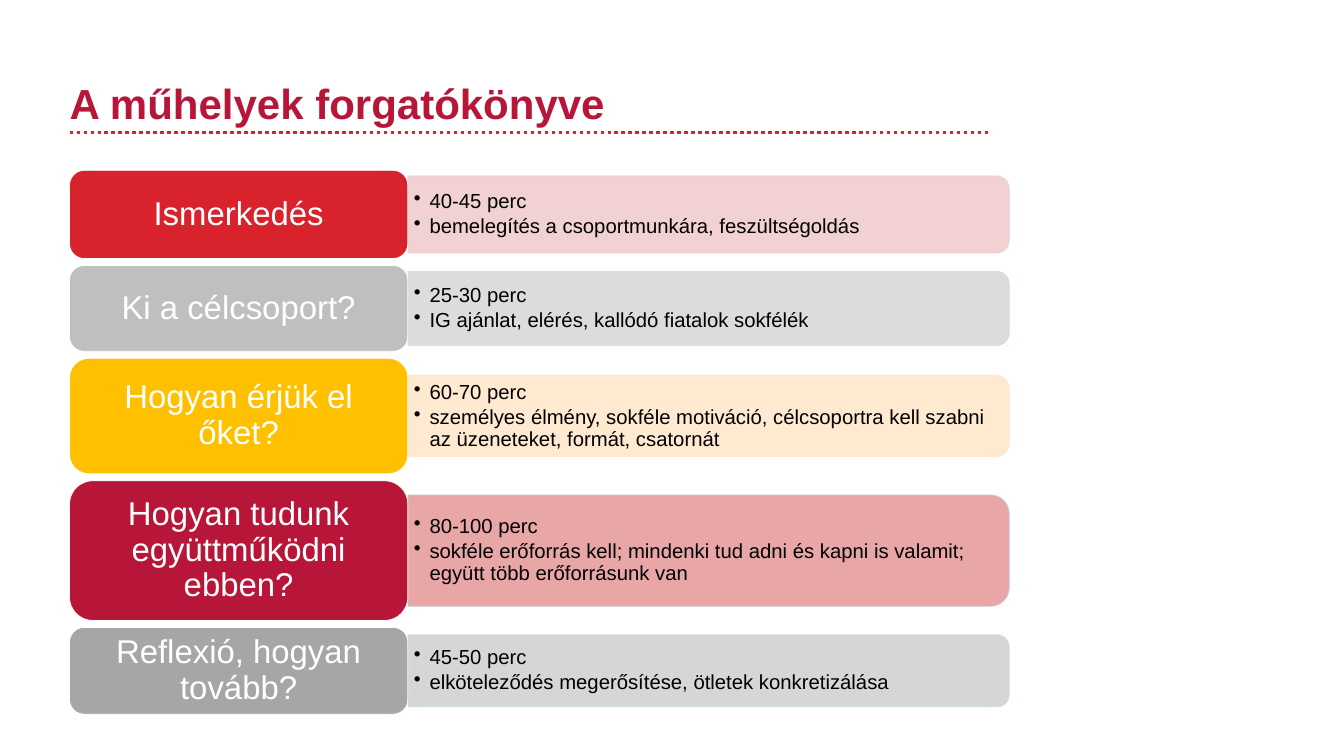
from dataclasses import dataclass

import lxml.etree
import pptx
import pptx.dml.color
import pptx.enum.dml
import pptx.enum.shapes
import pptx.enum.text
import pptx.oxml.ns
import pptx.util

RGBColor = pptx.dml.color.RGBColor
Inches = pptx.util.Inches
Pt = pptx.util.Pt
Shape = pptx.enum.shapes.MSO_SHAPE
Anchor = pptx.enum.text.MSO_ANCHOR
Align = pptx.enum.text.PP_ALIGN
qn = pptx.oxml.ns.qn

WHITE = RGBColor(0xFF, 0xFF, 0xFF)
BLACK = RGBColor(0, 0, 0)
RED = RGBColor(0xD8, 0x22, 0x2C)
CRIMSON = RGBColor(0xB8, 0x16, 0x39)
BLOOD = RGBColor(0xC0, 0, 0)
ROSE = RGBColor(0xF0, 0xCD, 0xCD)
AMBER = RGBColor(0xFF, 0xC0, 0)
CREAM = RGBColor(0xFF, 0xE8, 0xCC)
SILVER = RGBColor(0xBF, 0xBF, 0xBF)
PALE = RGBColor(0xD9, 0xD9, 0xD9)
GREY = RGBColor(0xA6, 0xA6, 0xA6)
MINT = RGBColor(0xCE, 0xE3, 0xD7)
MIST = RGBColor(0xCC, 0xCE, 0xD6)

FONT = "Arial"
LEFT, TOP, GAP = 1.38, 3.38, 0.14
LABEL_W, BAR_W = 6.71, 11.93
BAR_X = LEFT + LABEL_W


@dataclass(frozen=True)
class Step:
    label: str
    time: str
    detail: str
    height: float
    bar: float
    color: RGBColor
    tint: RGBColor
    alpha: int
    edge: RGBColor


STEPS = (
    Step("Ismerkedés", "40-45 perc", "bemelegítés a csoportmunkára, feszültségoldás",
         1.75, 1.53, RED, ROSE, 90, ROSE),
    Step("Ki a célcsoport?", "25-30 perc", "IG ajánlat, elérés, kallódó fiatalok sokfélék",
         1.7, 1.47, SILVER, PALE, 90, MINT),
    Step("Hogyan érjük el őket?", "60-70 perc",
         "személyes élmény, sokféle motiváció, célcsoportra kell szabni "
         "az üzeneteket, formát, csatornát",
         2.29, 1.62, AMBER, CREAM, 90, CREAM),
    Step("Hogyan tudunk együttműködni ebben?", "80-100 perc",
         "sokféle erőforrás kell; mindenki tud adni és kapni is valamit; "
         "együtt több erőforrásunk van",
         2.77, 2.21, CRIMSON, BLOOD, 35, MIST),
    Step("Reflexió, hogyan tovább?", "45-50 perc",
         "elköteleződés megerősítése, ötletek konkretizálása",
         1.72, 1.43, GREY, GREY, 46, MINT),
)


def set_frame(frame, anchor, side: float, edge: float) -> None:
    frame.word_wrap = True
    frame.vertical_anchor = anchor
    frame.margin_left = frame.margin_right = Inches(side)
    frame.margin_top = frame.margin_bottom = Inches(edge)


def set_font(para, size: float, color: RGBColor, bold: bool = False) -> None:
    font = para.font
    font.name, font.size, font.bold = FONT, Pt(size), bold
    font.color.rgb = color


def fade(fill, alpha: int) -> None:
    for node in fill.iter(qn("a:srgbClr")):
        lxml.etree.SubElement(node, qn("a:alpha"), val=str(alpha * 1000))


def add_block(slide, kind, box: tuple, color: RGBColor, edge: RGBColor):
    block = slide.shapes.add_shape(kind, *map(Inches, box))
    block.shadow.inherit = False
    block.fill.solid()
    block.fill.fore_color.rgb = color
    block.line.color.rgb = edge
    block.line.width = Pt(1)
    return block


def add_title(slide) -> None:
    box = slide.shapes.add_textbox(Inches(LEFT), Inches(1.48), Inches(18.24), Inches(2.02))
    set_frame(box.text_frame, Anchor.TOP, 0, 0.05)
    para = box.text_frame.paragraphs[0]
    para.text = "A műhelyek forgatókönyve"
    set_font(para, 60, CRIMSON, True)


def add_rule(slide) -> None:
    rule = slide.shapes.add_connector(pptx.enum.shapes.MSO_CONNECTOR.STRAIGHT,
                                      Inches(LEFT), Inches(2.63), Inches(19.62), Inches(2.63))
    rule.line.color.rgb = RED
    rule.line.width = Pt(5)
    rule.line.dash_style = pptx.enum.dml.MSO_LINE.ROUND_DOT
    lxml.etree.SubElement(rule._element.spPr, qn("a:effectLst"))


def add_bar(slide, step: Step, mid: float) -> None:
    box = (BAR_X + (BAR_W - step.bar) / 2, mid - BAR_W / 2, step.bar, BAR_W)
    bar = add_block(slide, Shape.ROUND_2_SAME_RECTANGLE, box, step.tint, step.edge)
    bar.rotation = 90
    props = bar._element.spPr
    fade(props.find(qn("a:solidFill")), step.alpha)
    fade(props.find(qn("a:ln")), 90)


def add_notes(slide, step: Step, mid: float) -> None:
    high = step.bar * 0.9
    box = slide.shapes.add_textbox(Inches(BAR_X), Inches(mid - high / 2),
                                   Inches(11.86), Inches(high))
    frame = box.text_frame
    set_frame(frame, Anchor.MIDDLE, 0.12, 0.06)
    frame.text = f"{step.time}\n{step.detail}"
    for para in frame.paragraphs:
        para.line_spacing = 0.9
        para.space_after = Pt(4.5)
        props = para._p.get_or_add_pPr()
        props.set("marL", str(Inches(0.31)))
        props.set("indent", str(-Inches(0.31)))
        lxml.etree.SubElement(props, qn("a:buChar"), char="•")
        set_font(para, 29, BLACK)


def add_label(slide, step: Step, top: float) -> None:
    box = (LEFT, top, LABEL_W, step.height)
    label = add_block(slide, Shape.ROUNDED_RECTANGLE, box, step.color, WHITE)
    set_frame(label.text_frame, Anchor.MIDDLE, 0.2, 0.1)
    para = label.text_frame.paragraphs[0]
    para.text = step.label
    para.alignment = Align.CENTER
    para.line_spacing = 0.9
    set_font(para, 47, WHITE)


def main() -> None:
    """Build the workshop schedule slide."""
    deck = pptx.Presentation()
    deck.slide_width, deck.slide_height = Inches(26.66), Inches(15)
    slide = deck.slides.add_slide(deck.slide_layouts[6])
    add_rule(slide)
    add_title(slide)
    top = TOP
    for step in STEPS:
        mid = top + step.height / 2
        add_bar(slide, step, mid)
        add_notes(slide, step, mid)
        add_label(slide, step, top)
        top += step.height + GAP
    deck.save("out.pptx")


if __name__ == "__main__":
    main()
